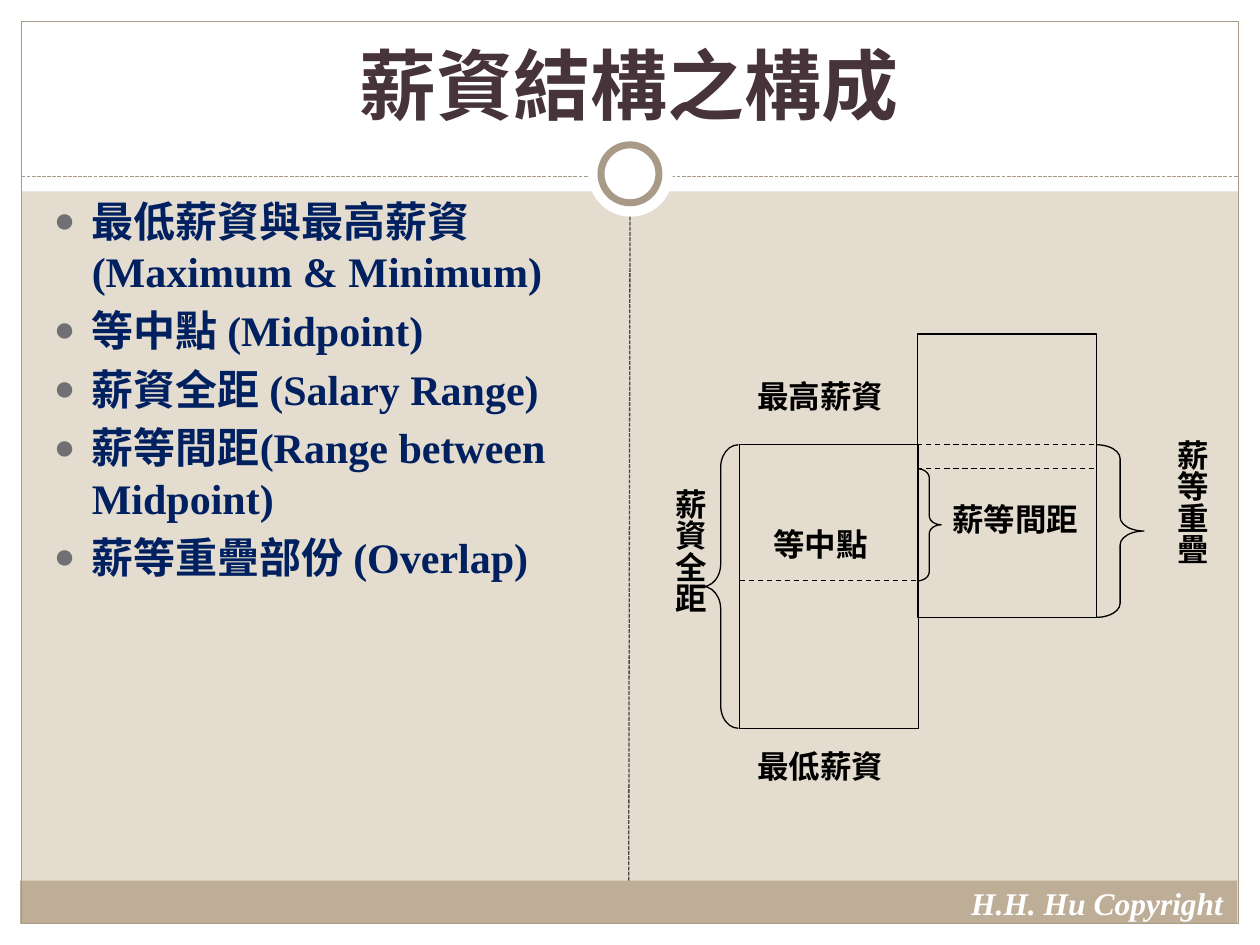
from lxml import etree
from pptx import Presentation
from pptx.dml.color import RGBColor
from pptx.enum.dml import MSO_LINE
from pptx.enum.shapes import MSO_CONNECTOR, MSO_SHAPE
from pptx.enum.text import MSO_ANCHOR, MSO_AUTO_SIZE, PP_ALIGN
from pptx.oxml.ns import qn
from pptx.util import Inches, Pt

RECT, OVAL = MSO_SHAPE.RECTANGLE, MSO_SHAPE.OVAL
LEFT_BRACE, RIGHT_BRACE = MSO_SHAPE.LEFT_BRACE, MSO_SHAPE.RIGHT_BRACE
STRAIGHT = MSO_CONNECTOR.STRAIGHT
DASH, SYS_DASH = MSO_LINE.DASH, MSO_LINE.SQUARE_DOT
CENTER, LEFT = PP_ALIGN.CENTER, PP_ALIGN.LEFT
BOTTOM = MSO_ANCHOR.BOTTOM
FIT_SHAPE, NO_FIT = MSO_AUTO_SIZE.SHAPE_TO_FIT_TEXT, MSO_AUTO_SIZE.NONE
WHITE, BLACK, NAVY, PLUM = "FFFFFF", "000000", "002060", "46343A"
BEIGE, TAN, BROWN, GRAY, BULLET = "E3DCCF", "BEAE98", "A89A86", "46464A", "6F6F74"
SERIF, SANS = "Times New Roman", "Arial"


def rgb(value):
    """Turn a hex string into a colour."""
    return RGBColor.from_string(value)


class SlideBuilder:
    """Draw styled elements on the current slide or group."""

    def __init__(self, slide):
        """Start drawing on the slide itself."""
        self.slide = slide
        self.shapes = slide.shapes

    def shape(self, kind, x, y, w, h, fill=None, line=None, width=0.75, curve=None):
        """Add a preset shape."""
        sp = self.shapes.add_shape(kind, Inches(x), Inches(y), Inches(w), Inches(h))
        sp.shadow.inherit = False
        if fill:
            sp.fill.solid()
            sp.fill.fore_color.rgb = rgb(fill)
        else:
            sp.fill.background()
        if line:
            sp.line.color.rgb = rgb(line)
            sp.line.width = Pt(width)
        else:
            sp.line.fill.background()
        if curve:
            sp.adjustments[0] = curve
            sp.adjustments[1] = 0.5

    def line(self, x1, y1, x2, y2, color=BLACK, dash=DASH):
        """Add a thin dashed line."""
        ln = self.shapes.add_connector(STRAIGHT, Inches(x1), Inches(y1), Inches(x2), Inches(y2))
        ln.line.color.rgb = rgb(color)
        ln.line.width = Pt(0.75)
        ln.line.dash_style = dash
        etree.SubElement(ln.element.spPr, qn("a:effectLst"))

    def run(self, p, text, size, font, color, italic=False):
        """Add one bold run."""
        r = p.add_run()
        r.text = text
        r.font.size = Pt(size)
        r.font.name = font
        r.font.bold = True
        r.font.italic = italic
        r.font.color.rgb = rgb(color)

    def label(self, text, x, y, w, h, font=SANS, color=BLACK, align=CENTER,
              italic=False, vertical=False):
        """Add a one-line label."""
        sp = self.shapes.add_textbox(Inches(x), Inches(y), Inches(w), Inches(h))
        tf = sp.text_frame
        tf.word_wrap = False
        tf.auto_size = FIT_SHAPE
        if vertical:
            tf._txBody.bodyPr.set("vert", "eaVert")
        p = tf.paragraphs[0]
        p.alignment = align
        self.run(p, text, 18, font, color, italic)

    def title(self, text, x, y, w, h):
        """Place and format the title above the backdrop."""
        sp = self.slide.shapes.title
        sp.left, sp.top, sp.width, sp.height = Inches(x), Inches(y), Inches(w), Inches(h)
        tf = sp.text_frame
        tf.word_wrap = True
        tf.auto_size = NO_FIT
        tf.vertical_anchor = BOTTOM
        p = tf.paragraphs[0]
        p.alignment = CENTER
        self.run(p, text, 44, SERIF, PLUM)
        self.slide.shapes.element.append(sp.element)

    def bullets(self, items, x, y, w, h):
        """Add a bulleted list."""
        sp = self.shapes.add_textbox(Inches(x), Inches(y), Inches(w), Inches(h))
        tf = sp.text_frame
        tf.word_wrap = True
        for i, item in enumerate(items):
            p = tf.add_paragraph() if i else tf.paragraphs[0]
            pPr = p._p.get_or_add_pPr()
            pPr.set("marL", str(Inches(0.3)))
            pPr.set("indent", str(Inches(-0.3)))
            color = etree.SubElement(pPr, qn("a:buClr"))
            etree.SubElement(color, qn("a:srgbClr"), val=BULLET)
            etree.SubElement(pPr, qn("a:buSzPct"), val="85000")
            etree.SubElement(pPr, qn("a:buFont"), typeface=SANS)
            etree.SubElement(pPr, qn("a:buChar"), char="●")
            if i:
                p.space_before = Pt(4.8)
            self.run(p, item, 24, SERIF, NAVY)


def draw_backdrop(b):
    """Draw the frame, bands, dividers and ring."""
    for box in ((0, 7.33, 10, 0.17), (0, 0, 10, 1.52), (0, 0, 0.17, 7.5), (9.83, 0, 0.17, 7.5)):
        b.shape(RECT, *box, fill=WHITE)
    b.shape(RECT, 0.16, 6.99, 9.66, 0.34, fill=TAN)
    b.shape(RECT, 0.17, 0.17, 9.66, 7.16, line=BROWN)
    b.line(0.17, 1.4, 9.83, 1.4, BROWN, SYS_DASH)
    b.shape(OVAL, 4.67, 1.05, 0.67, 0.67, fill=WHITE)
    b.shape(OVAL, 4.77, 1.15, 0.46, 0.46, fill=WHITE, line=BROWN, width=4)
    b.label("H.H. Hu Copyright", 7.61, 6.97, 2.27, 0.4, SERIF, WHITE, LEFT, italic=True)
    b.line(4.99, 6.99, 5, 1.72, GRAY, SYS_DASH)


def draw_ranges(b):
    """Draw the two overlapping pay grades with their braces and labels."""
    b.shapes = b.slide.shapes.add_group_shape().shapes
    low_x, high_x, end_x = 5.87, 7.28, 8.7
    low_top, high_top, height = 3.53, 2.65, 2.25
    low_mid, high_mid = 4.61, 3.72
    for x, y in ((low_x, low_top), (high_x, high_top)):
        b.shape(RECT, x, y, 1.42, height, line=BLACK)
    for x1, x2, y in ((low_x, high_x, low_mid), (high_x, end_x, high_mid),
                      (high_x, end_x, low_top)):
        b.line(x1, y, x2, y)
    for kind, x, y, w, h, curve in (
            (LEFT_BRACE, 5.58, low_top, 0.28, height, 0.64),
            (RIGHT_BRACE, high_x, high_mid, 0.19, low_mid - high_mid, 0.38),
            (RIGHT_BRACE, end_x, low_top, 0.38, high_top + height - low_top, 0.29)):
        b.shape(kind, x, y, w, h, line=BLACK, curve=curve)
    for text, x, y, w in (("最高薪資", 5.83, 2.94, 1.36), ("最低薪資", 5.83, 5.88, 1.36),
                          ("等中點", 5.97, 4.12, 1.08), ("薪等間距", 7.38, 3.92, 1.36)):
        b.label(text, x, y, w, 0.47)
    for text, x, y in (("薪資全距", 5, 3.78), ("薪等重疊", 8.98, 3.39)):
        b.label(text, x, y, 0.68, 1.65, vertical=True)


def main():
    """Build and save the slide."""
    prs = Presentation()
    prs.slide_width, prs.slide_height = Inches(10), Inches(7.5)
    s = prs.slides.add_slide(prs.slide_layouts[5])
    s.background.fill.solid()
    s.background.fill.fore_color.rgb = rgb(BEIGE)
    b = SlideBuilder(s)
    draw_backdrop(b)
    b.title("薪資結構之構成", 0.33, 0.25, 9.33, 0.83)
    b.bullets(("最低薪資與最高薪資(Maximum & Minimum)", "等中點 (Midpoint)",
               "薪資全距 (Salary Range)", "薪等間距(Range between Midpoint)",
               "薪等重疊部份 (Overlap)"), 0.33, 1.5, 4.42, 5.12)
    draw_ranges(b)
    prs.save("out.pptx")


if __name__ == "__main__":
    main()
